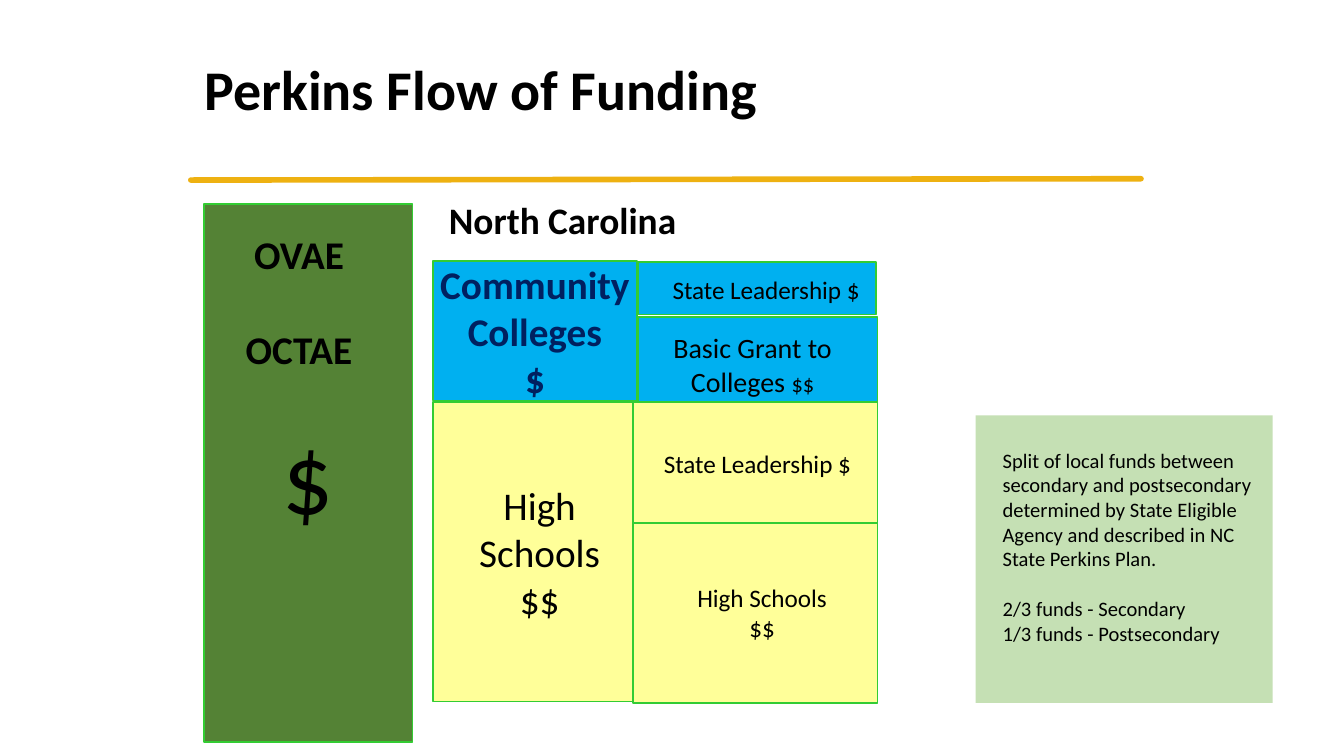
from lxml import etree
from pptx import Presentation
from pptx.dml.color import RGBColor
from pptx.enum import shapes, text
from pptx.oxml import ns
from pptx.util import Inches, Pt

FONT = "Calibri"
BLACK, NAVY = "000000", "002060"
DARK_GREEN, PALE_GREEN, BORDER = "548235", "C5E0B4", "33CC33"
BLUE, YELLOW, GOLD = "00B0F0", "FFFF99", "EEB111"
CENTER, LEFT = text.PP_ALIGN.CENTER, text.PP_ALIGN.LEFT
MIDDLE, TOP = text.MSO_ANCHOR.MIDDLE, text.MSO_ANCHOR.TOP


def rgb(color):
    return RGBColor.from_string(color)


def style(paragraph, size, color=BLACK, bold=False, align=CENTER):
    paragraph.alignment = align
    font = paragraph.font
    font.name, font.size, font.bold = FONT, Pt(size), bold
    font.color.rgb = rgb(color)


def write(holder, lines, size, color=BLACK, bold=False, align=CENTER,
          anchor=MIDDLE, insets=(0, 0, 0, 0)):
    frame = holder.text_frame
    frame.word_wrap = True
    frame.vertical_anchor = anchor
    (frame.margin_left, frame.margin_top,
     frame.margin_right, frame.margin_bottom) = map(Inches, insets)
    frame.text = "\n".join(lines)
    for paragraph in frame.paragraphs:
        style(paragraph, size, color, bold, align)
    return frame


def add_panel(slide, box, fill, border=BORDER):
    panel = slide.shapes.add_shape(
        shapes.MSO_SHAPE.RECTANGLE, *map(Inches, box))
    panel.shadow.inherit = False
    panel.fill.solid()
    panel.fill.fore_color.rgb = rgb(fill)
    if border:
        panel.line.color.rgb = rgb(border)
        panel.line.width = Pt(1)
    else:
        panel.line.fill.background()
    return panel


def add_label(slide, box, lines, size, **look):
    label = slide.shapes.add_textbox(*map(Inches, box))
    return write(label, lines, size, **look)


def add_title(slide, words):
    title = slide.shapes.title
    title.left, title.top, title.width, title.height = map(
        Inches, (1.42, 0.14, 8.05, 1.09))
    frame = write(title, [words], 30, bold=True, align=LEFT,
                  insets=(0.1, 0.05, 0.1, 0.05))
    frame.paragraphs[0].line_spacing = 0.9


def add_rule(slide):
    rule = slide.shapes.add_connector(
        shapes.MSO_CONNECTOR.STRAIGHT,
        Inches(1.42), Inches(1.34), Inches(8.49), Inches(1.33))
    rule.line.color.rgb = rgb(GOLD)
    rule.line.width = Pt(3)
    rule.line._get_or_add_ln().set("cap", "rnd")
    etree.SubElement(rule._element.spPr, ns.qn("a:effectLst"))


def add_federal_column(slide):
    add_panel(slide, (1.52, 1.52, 1.55, 4), DARK_GREEN)
    add_label(slide, (1.52, 2.98, 1.55, 1.09), ["$"], 54)
    offices = add_label(slide, (1.75, 1.71, 0.95, 1.06),
                        ["OVAE", "OCTAE"], 21, bold=True)
    offices.paragraphs[1].space_before = Pt(25.6)


def add_college_blocks(slide):
    add_panel(slide, (4.75, 2.36, 1.78, 0.63), BLUE)
    grant = add_label(slide, (4.75, 2.46, 1.7, 0.5),
                      ["Basic Grant to Colleges "], 15)
    amount = grant.paragraphs[0].add_run()
    amount.text = "$$"
    amount.font.size = Pt(12)
    add_panel(slide, (4.75, 1.95, 1.77, 0.39), BLUE)
    add_label(slide, (4.75, 1.96, 1.9, 0.39), ["State Leadership $"], 13.5)


def add_school_block(slide, block, label, lines, size):
    add_panel(slide, block, YELLOW)
    write(add_panel(slide, label, YELLOW, border=None), lines, size)


def add_split_note(slide):
    note = add_panel(slide, (7.26, 3.09, 2.21, 2.14), PALE_GREEN, border=None)
    frame = write(note, [
        "Split of local funds between secondary and postsecondary determined "
        "by State Eligible Agency and described in NC State Perkins Plan.",
        "2/3 funds - Secondary",
        "1/3 funds - Postsecondary",
    ], 11, align=LEFT, anchor=TOP, insets=(0.2, 0.24, 0.1, 0.05))
    frame.paragraphs[1].space_before = Pt(13.4)


def main():
    deck = Presentation()
    deck.slide_width = Inches(10)
    deck.slide_height = deck.slide_width * 9 // 16
    slide = deck.slides.add_slide(deck.slide_layouts[5])

    add_title(slide, "Perkins Flow of Funding")
    add_rule(slide)
    add_federal_column(slide)
    schools = ["High Schools", "$$"]
    add_school_block(slide, (3.22, 2.99, 1.49, 2.23),
                     (3.32, 3.36, 1.39, 1.49), schools, 21)
    add_college_blocks(slide)
    add_label(slide, (3.31, 1.44, 2.42, 0.39), ["North Carolina"], 20,
              bold=True, align=LEFT, anchor=TOP, insets=(0.03,) * 4)
    add_school_block(slide, (4.71, 3.89, 1.82, 1.34),
                     (4.82, 4.33, 1.7, 0.45), schools, 13.5)
    add_school_block(slide, (4.71, 2.99, 1.82, 0.9),
                     (4.82, 3.26, 1.63, 0.37), ["State Leadership $"], 13.5)
    colleges = add_panel(slide, (3.22, 1.94, 1.52, 1.04), BLUE)
    write(colleges, ["Community Colleges", "$"], 21, color=NAVY, bold=True)
    add_split_note(slide)

    deck.save("out.pptx")


if __name__ == "__main__":
    main()
